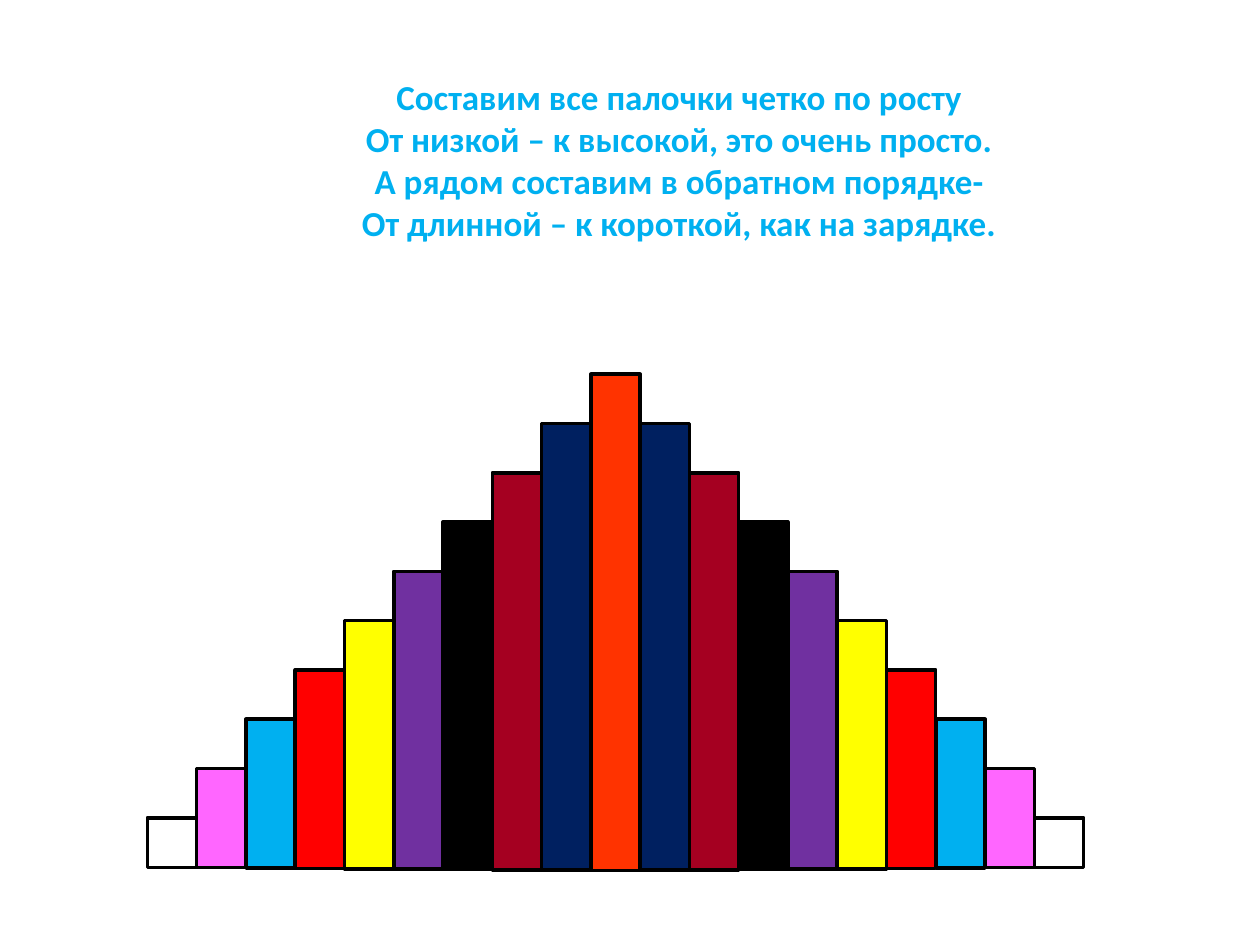
"""Build a slide with a rhyme above a symmetric staircase of coloured rods."""
import pptx
import pptx.dml.color
import pptx.enum.shapes
import pptx.enum.text
import pptx.util

Inches, Pt = pptx.util.Inches, pptx.util.Pt

RHYME = [
    "Составим все палочки четко по росту",
    "От низкой – к высокой, это очень просто.",
    "А рядом составим в обратном порядке-",
    "От длинной – к короткой, как на зарядке.",
]
RHYME_FONT = {"name": "Calibri", "size": Pt(20), "bold": True}
ROD_COLOURS = ["FF3300", "002060", "A50021", "000000", "7030A0",
               "FFFF00", "FF0000", "00B0F0", "FF66FF", "FFFFFF"]
CENTRE_LEFT, PEAK_TOP, PEAK_HEIGHT = 4.69, 2.97, 3.94
ROD_WIDTH = 0.39
STEP = 3.52 / (len(ROD_COLOURS) - 1)


def rgb(value):
    return pptx.dml.color.RGBColor.from_string(value)


def add_rhyme(s):
    tf = s.shapes.add_textbox(Inches(2.5), Inches(0.55), Inches(5.78), Inches(1.45)).text_frame
    tf.word_wrap = True
    tf.auto_size = pptx.enum.text.MSO_AUTO_SIZE.SHAPE_TO_FIT_TEXT
    for i, line in enumerate(RHYME):
        p = tf.add_paragraph() if i else tf.paragraphs[0]
        p.alignment = pptx.enum.text.PP_ALIGN.CENTER
        r = p.add_run()
        r.text = line
        for key, value in RHYME_FONT.items():
            setattr(r.font, key, value)
        r.font.color.rgb = rgb("00B0F0")


def add_rod(s, left, top, height, colour):
    sp = s.shapes.add_shape(pptx.enum.shapes.MSO_SHAPE.RECTANGLE, Inches(left), Inches(top),
                            Inches(ROD_WIDTH), Inches(height))
    sp.shadow.inherit = False
    sp.fill.solid()
    sp.fill.fore_color.rgb = rgb(colour)
    sp.line.color.rgb = rgb("000000")
    sp.line.width = Pt(2)


def main():
    prs = pptx.Presentation()
    prs.slide_width, prs.slide_height = Inches(10), Inches(7.5)
    s = prs.slides.add_slide(prs.slide_layouts[6])
    add_rhyme(s)
    for i, colour in enumerate(ROD_COLOURS):
        height = PEAK_HEIGHT * (1 - i / len(ROD_COLOURS))
        for side in (-1, 1) if i else (0,):
            add_rod(s, CENTRE_LEFT + side * i * STEP, PEAK_TOP + i * STEP, height, colour)
    prs.save("out.pptx")


if __name__ == "__main__":
    main()
